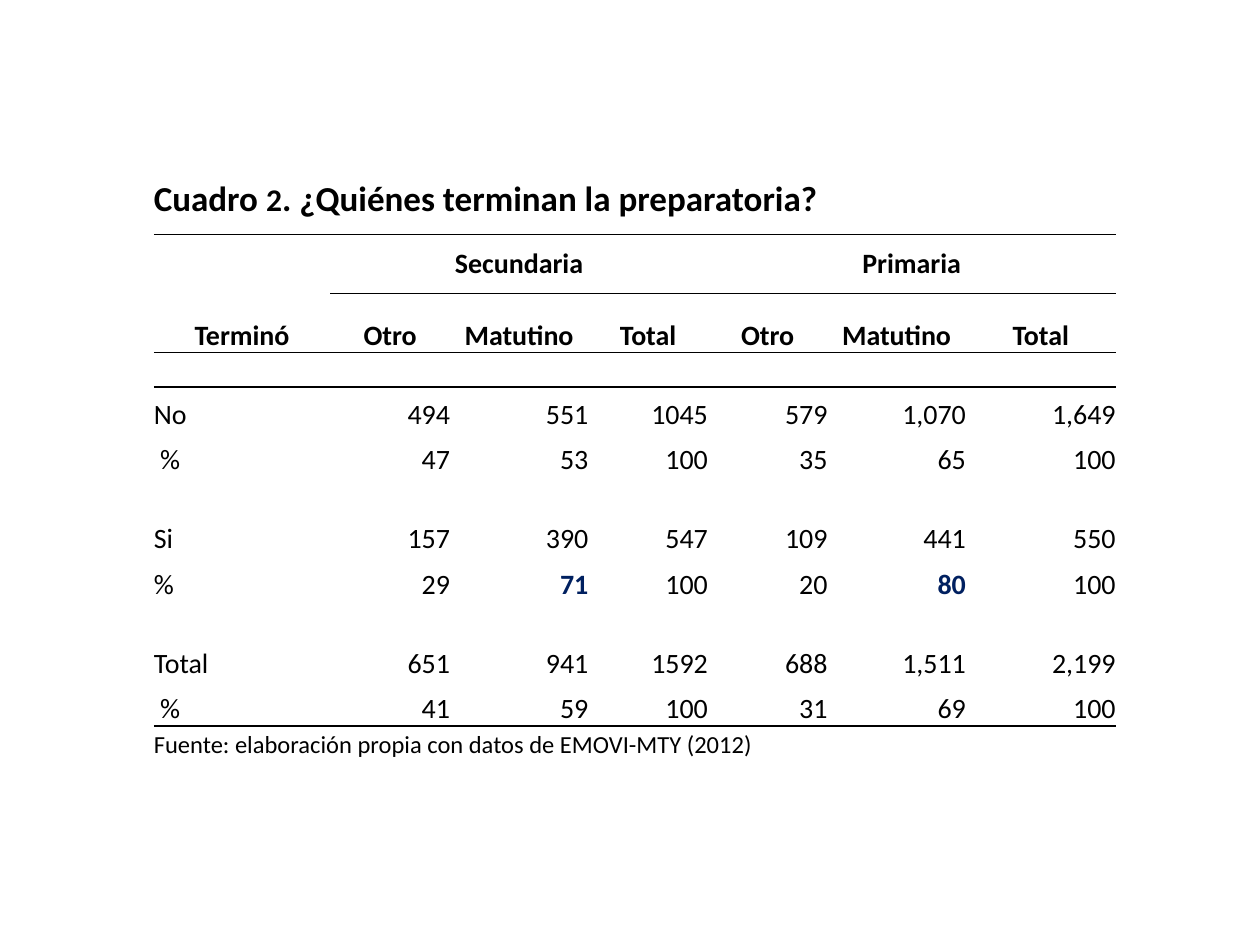
from lxml.etree import SubElement
from pptx import Presentation
from pptx.dml.color import RGBColor
from pptx.enum.text import MSO_ANCHOR as ANCHOR, PP_ALIGN as ALIGN
from pptx.oxml.ns import qn
from pptx.util import Cm, Pt

BLACK = RGBColor(0, 0, 0)
NAVY = RGBColor(0x00, 0x20, 0x60)
WHITE = RGBColor(0xFF, 0xFF, 0xFF)

FONT = "Calibri"
NO_STYLE = "{2D5ABB26-0587-4C30-8999-92F81FD0307C}"
COL_WIDTHS = [3.56, 2.41, 2.79, 2.41, 2.41, 2.79, 3.02]
GAP, LINE = 0.69, 0.91
ROW_HEIGHTS = [1.4, 1.19, 1.19] + [GAP, LINE, LINE] * 3 + [0.69]
LAST_ROW = len(ROW_HEIGHTS) - 1

TITLE = [("Cuadro ", 20), ("2", 18), (". ¿Quiénes terminan la preparatoria?", 20)]
SOURCE = "Fuente: elaboración propia con datos de EMOVI-MTY (2012)"
GROUPS = {1: "Secundaria", 4: "Primaria"}
SUBHEADS = ["Otro", "Matutino", "Total"] * 2
DATA = {
    4: ["No", "494", "551", "1045", "579", "1,070", "1,649"],
    5: [" %", "47", "53", "100", "35", "65", "100"],
    7: ["Si", "157", "390", "547", "109", "441", "550"],
    8: ["% ", "29", "71", "100", "20", "80", "100"],
    10: ["Total", "651", "941", "1592", "688", "1,511", "2,199"],
    11: [" %", "41", "59", "100", "31", "69", "100"],
}
HIGHLIGHTS = {(8, 2), (8, 5)}


def write(cell, runs, align=ALIGN.LEFT, anchor=ANCHOR.BOTTOM, bold=False, color=BLACK):
    """Fill a cell with (text, size) runs."""
    cell.vertical_anchor = anchor
    p = cell.text_frame.paragraphs[0]
    p.alignment = align
    for text, size in runs:
        r = p.add_run()
        r.text = text
        for name, value in {"name": FONT, "size": Pt(size), "bold": bold}.items():
            setattr(r.font, name, value)
        r.font.color.rgb = color


def add_border(cell, side):
    tc_pr = cell._tc.get_or_add_tcPr()
    ln = SubElement(tc_pr, qn(f"a:ln{side}"), w=str(Pt(1)))
    fill = SubElement(ln, qn("a:solidFill"))
    SubElement(fill, qn("a:srgbClr"), val=str(BLACK))


def rule_below(table, row, first_col=0):
    """Draw a horizontal rule between a row and the next one."""
    for col in range(first_col, len(COL_WIDTHS)):
        add_border(table.cell(row, col), "B")
        add_border(table.cell(row + 1, col), "T")


def format_cells(table):
    margins = {f"margin_{side}": 0 for side in ("left", "right", "top", "bottom")}
    for cell in table.iter_cells():
        for name, value in margins.items():
            setattr(cell, name, value)
        cell.fill.solid()
        cell.fill.fore_color.rgb = WHITE
        # Keeps empty cells from stretching their rows
        end = cell.text_frame.paragraphs[0]._p.get_or_add_endParaRPr()
        end.set("sz", "1200")


def add_grid(slide):
    frame = slide.shapes.add_table(
        len(ROW_HEIGHTS), len(COL_WIDTHS), Cm(3.1), Cm(3.33),
        Cm(sum(COL_WIDTHS)), Cm(sum(ROW_HEIGHTS)))
    table = frame.table
    table.first_row = table.horz_banding = False
    table._tbl.tblPr.find(qn("a:tableStyleId")).text = NO_STYLE
    for column, width in zip(table.columns, COL_WIDTHS):
        column.width = Cm(width)
    for row, height in zip(table.rows, ROW_HEIGHTS):
        row.height = Cm(height)
    for row, first_col in [(0, 0), (1, 1), (2, 0), (LAST_ROW - 1, 0)]:
        rule_below(table, row, first_col)
    format_cells(table)
    return table


def write_headers(table):
    for row in (0, LAST_ROW):
        table.cell(row, 0).merge(table.cell(row, 4))
    write(table.cell(0, 0), TITLE, anchor=ANCHOR.MIDDLE, bold=True)
    write(table.cell(LAST_ROW, 0), [(SOURCE, 14)])

    table.cell(1, 0).merge(table.cell(2, 0))
    write(table.cell(1, 0), [("Terminó", 16)], ALIGN.CENTER, bold=True)
    for col, text in GROUPS.items():
        table.cell(1, col).merge(table.cell(1, col + 2))
        write(table.cell(1, col), [(text, 16)], ALIGN.CENTER, ANCHOR.MIDDLE, True)
    for col, text in enumerate(SUBHEADS, 1):
        write(table.cell(2, col), [(text, 16)], ALIGN.CENTER, bold=True)


def write_data(table):
    for row, values in DATA.items():
        for col, text in enumerate(values):
            marked = (row, col) in HIGHLIGHTS
            write(table.cell(row, col), [(text, 16)],
                  ALIGN.RIGHT if col else ALIGN.LEFT,
                  bold=marked, color=NAVY if marked else BLACK)


def main():
    prs = Presentation()
    prs.slide_width, prs.slide_height = Cm(25.4), Cm(19.05)
    slide = prs.slides.add_slide(prs.slide_layouts[6])
    table = add_grid(slide)
    write_headers(table)
    write_data(table)
    prs.save("out.pptx")


if __name__ == "__main__":
    main()
